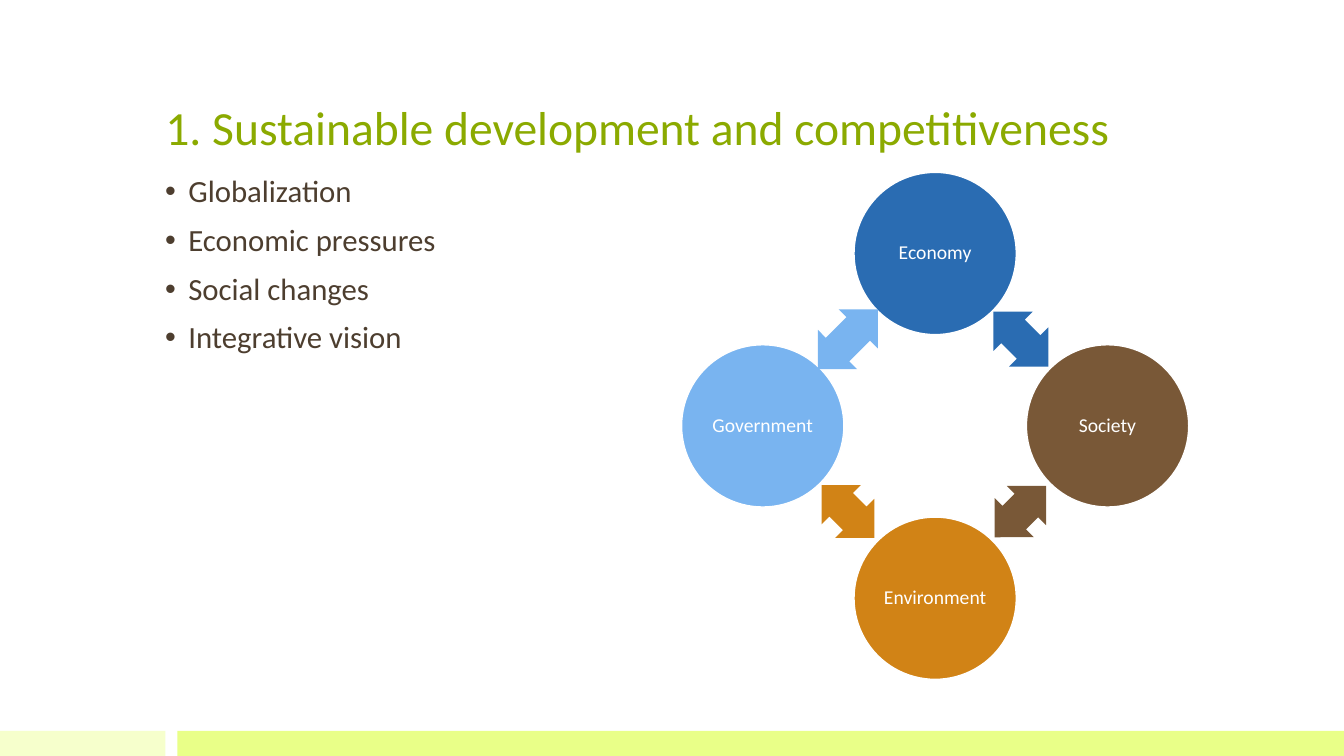
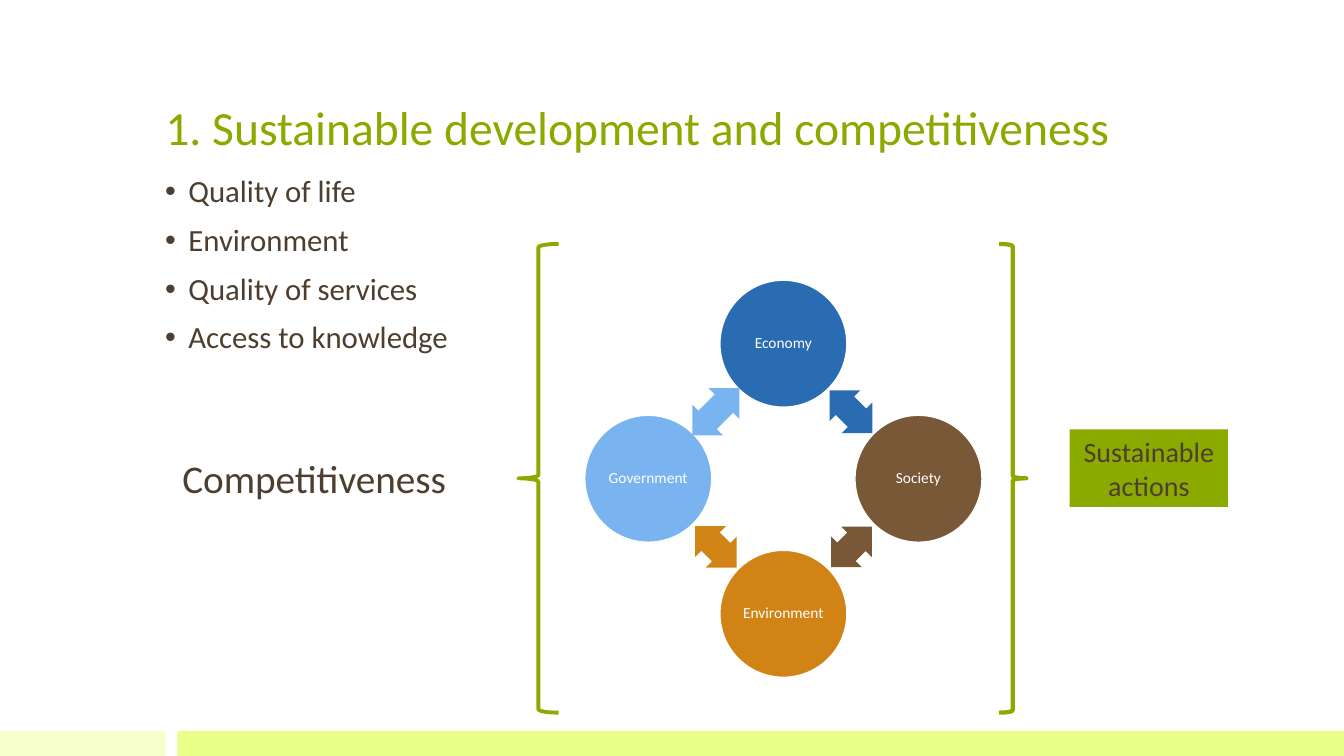
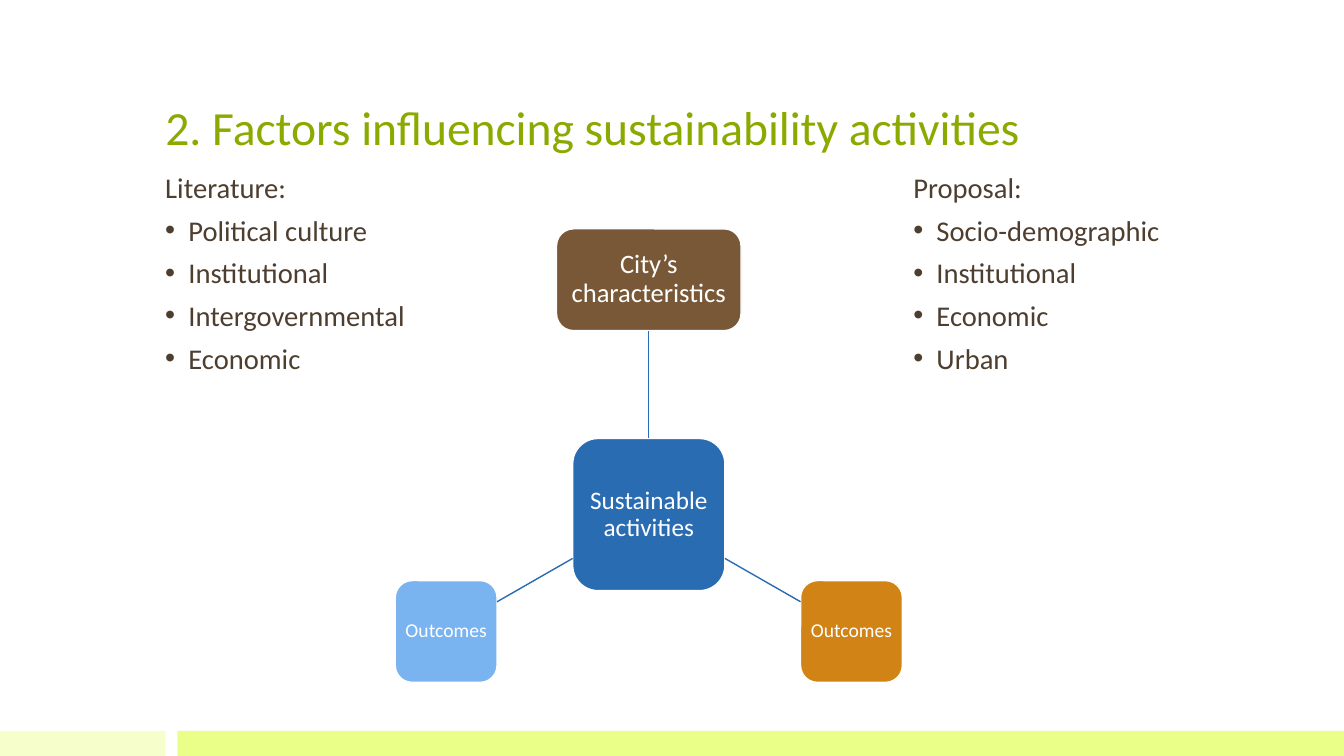
from dataclasses import dataclass

from lxml.etree import SubElement
from pptx import Presentation
from pptx.dml.color import RGBColor
from pptx.enum.shapes import MSO_CONNECTOR, MSO_SHAPE as Shape
from pptx.enum.text import MSO_ANCHOR as Anchor, MSO_AUTO_SIZE, PP_ALIGN as Align
from pptx.oxml.ns import qn
from pptx.util import Emu, Pt

# Shared look
PX = 9144  # EMU per px, 100 px to the inch
WIDTH, HEIGHT = 1333, 750
FONT = "Calibri"
WHITE = RGBColor(0xFF, 0xFF, 0xFF)
PALE_LIME = RGBColor(0xF6, 0xFF, 0xCC)
LIME = RGBColor(0xE9, 0xFF, 0x88)
GREEN = RGBColor(0x8B, 0xAA, 0x00)
DARK = RGBColor(0x4D, 0x3E, 0x2F)
BLUE = RGBColor(0x2A, 0x6C, 0xB2)
BROWN = RGBColor(0x79, 0x58, 0x37)
ORANGE = RGBColor(0xD1, 0x83, 0x16)
SKY = RGBColor(0x79, 0xB4, 0xF0)


@dataclass(frozen=True)
class Box:
    left: int
    top: int
    width: int
    height: int

    def emu(self) -> tuple[Emu, ...]:
        return tuple(px(n) for n in (self.left, self.top, self.width, self.height))


@dataclass(frozen=True)
class Sector:
    """A circle of the cycle and the arrow to the next one."""
    label: str
    color: RGBColor
    across: int  # direction from the cycle's centre
    down: int
    arrow_ratio: float  # arrow length / circle diameter


@dataclass(frozen=True)
class Factor:
    label: str
    color: RGBColor
    box: Box
    size: int


TITLE_BOX = Box(154, 30, 1025, 129)
BANDS = ((Box(0, 725, 164, 25), PALE_LIME), (Box(176, 725, 1157, 25), LIME))
SECTORS = (
    Sector("Economy", BLUE, 0, -1, 0.48),
    Sector("Society", BROWN, 1, 0, 0.45),
    Sector("Environment", ORANGE, 0, 1, 0.46),
    Sector("Government", SKY, -1, 0, 0.52),
)


def px(n: int) -> Emu:
    return Emu(n * PX)


def write_text(shape, lines, *, size, color=DARK, align=Align.LEFT, anchor=Anchor.TOP,
               spacing=None, before=None, bullets_from=None, inset=None, wrap=True):
    """Fill a shape with paragraphs, bulleted from the given line on."""
    frame = shape.text_frame
    frame.text = "\n".join(lines)
    frame.auto_size = MSO_AUTO_SIZE.NONE
    frame.word_wrap = wrap
    frame.vertical_anchor = anchor
    if inset is not None:
        frame.margin_left = frame.margin_right = px(inset)
        frame.margin_top = frame.margin_bottom = px(inset)
    for index, paragraph in enumerate(frame.paragraphs):
        paragraph.alignment = align
        if spacing is not None:
            paragraph.line_spacing = spacing
        if before is not None:
            paragraph.space_before = Pt(before)
        font = paragraph.runs[0].font
        font.name, font.size = FONT, Pt(size)
        font.color.rgb = color
        if bullets_from is not None and index >= bullets_from:
            properties = paragraph._p.get_or_add_pPr()
            properties.set("marL", str(px(23)))
            properties.set("indent", str(px(-23)))
            SubElement(properties, qn("a:buFont"), typeface="Arial")
            SubElement(properties, qn("a:buChar"), char="•")


def add_figure(slide, preset, box: Box, *, fill=None, line=None, weight=1.0):
    figure = slide.shapes.add_shape(preset, *box.emu())
    figure.shadow.inherit = False
    if fill is None:
        figure.fill.background()
    else:
        figure.fill.solid()
        figure.fill.fore_color.rgb = fill
    if line is None:
        figure.line.fill.background()
    else:
        figure.line.color.rgb = line
        figure.line.width = Pt(weight)
    return figure


def add_text(slide, box: Box, lines, **style):
    write_text(slide.shapes.add_textbox(*box.emu()), lines, **style)


def add_link(slide, start: tuple[int, int], end: tuple[int, int]):
    link = slide.shapes.add_connector(
        MSO_CONNECTOR.STRAIGHT, *(px(n) for n in (*start, *end)))
    link.line.color.rgb = BLUE
    link.line.width = Pt(1)
    SubElement(link._element.spPr, qn("a:effectLst"))
    return link


def new_slide(deck, title: str):
    """Start a title-only slide with the footer bands."""
    slide = deck.slides.add_slide(deck.slide_layouts[5])
    for box, color in BANDS:
        add_figure(slide, Shape.RECTANGLE, box, fill=color)
    heading = slide.shapes.title
    heading.left, heading.top, heading.width, heading.height = TITLE_BOX.emu()
    write_text(heading, [title], size=34, color=GREEN, anchor=Anchor.BOTTOM)
    return slide


def add_cycle(slide, center_x: int, center_y: int, diameter: int, step: int, size: int):
    """Four circles around a centre, with a two-way arrow between neighbours."""
    arrow_height = round(diameter * 0.34)
    for index, sector in enumerate(SECTORS):
        x = center_x + sector.across * step
        y = center_y + sector.down * step
        circle = add_figure(
            slide, Shape.OVAL,
            Box(x - diameter // 2, y - diameter // 2, diameter, diameter),
            fill=sector.color, line=WHITE)
        write_text(circle, [sector.label], size=size, color=WHITE, align=Align.CENTER,
                   anchor=Anchor.MIDDLE, spacing=0.9, inset=2, wrap=False)

        following = SECTORS[(index + 1) % len(SECTORS)]
        middle_x = center_x + (sector.across + following.across) * step // 2
        middle_y = center_y + (sector.down + following.down) * step // 2
        length = round(diameter * sector.arrow_ratio)
        arrow = add_figure(
            slide, Shape.LEFT_RIGHT_ARROW,
            Box(middle_x - length // 2, middle_y - arrow_height // 2, length, arrow_height),
            fill=sector.color)
        arrow.adjustments[0], arrow.adjustments[1] = 0.6, 0.5
        arrow.rotation = 45 + 90 * index


def add_factor(slide, factor: Factor):
    block = add_figure(slide, Shape.ROUNDED_RECTANGLE, factor.box,
                       fill=factor.color, line=WHITE)
    write_text(block, [factor.label], size=factor.size, color=WHITE, align=Align.CENTER,
               anchor=Anchor.MIDDLE, spacing=0.9, inset=2)
    return block


def build_development(deck):
    slide = new_slide(deck, "1. Sustainable development and competitiveness")
    add_text(slide, Box(154, 170, 399, 200),
             ["Globalization", "Economic pressures", "Social changes", "Integrative vision"],
             size=22, spacing=0.9, before=11, bullets_from=0)
    add_cycle(slide, 927, 422, diameter=161, step=171, size=14)


def build_competitiveness(deck):
    slide = new_slide(deck, "1. Sustainable development and competitiveness")
    add_text(slide, Box(154, 170, 399, 216),
             ["Quality of life", "Environment", "Quality of services", "Access to knowledge"],
             size=22, spacing=0.9, before=11, bullets_from=0)
    add_cycle(slide, 777, 475, diameter=126, step=134, size=11)

    # Input, braces and result
    add_text(slide, Box(171, 446, 290, 57), ["Competitiveness"], size=28)
    add_figure(slide, Shape.LEFT_BRACE, Box(514, 242, 40, 465), line=GREEN, weight=2.75)
    add_figure(slide, Shape.RIGHT_BRACE, Box(991, 242, 27, 465), line=GREEN, weight=3)
    actions = add_figure(slide, Shape.RECTANGLE, Box(1061, 426, 157, 77), fill=GREEN)
    write_text(actions, ["Sustainable actions"], size=20, align=Align.CENTER,
               anchor=Anchor.MIDDLE)


def build_factors(deck):
    slide = new_slide(deck, "2. Factors influencing sustainability activities")

    # Activities with their cause above and outcomes below
    activities = add_factor(slide, Factor(
        "Sustainable activities", BLUE, Box(568, 435, 151, 151), 18))
    city = add_factor(slide, Factor(
        "City’s characteristics", BROWN, Box(552, 227, 183, 101), 19))
    cause = add_link(slide, (643, 435), (643, 328))
    cause.begin_connect(activities, 0)
    cause.end_connect(city, 2)
    for color, left, start_x, end_x in ((ORANGE, 794, 719, 794), (SKY, 392, 568, 493)):
        add_factor(slide, Factor("Outcomes", color, Box(left, 576, 101, 101), 14))
        add_link(slide, (start_x, 554), (end_x, 597))

    # Factor lists
    for left, lines in (
        (154, ["Literature:", "Political culture", "Institutional",
               "Intergovernmental", "Economic"]),
        (896, ["Proposal:", "Socio-demographic", "Institutional", "Economic", "Urban"]),
    ):
        add_text(slide, Box(left, 170, 321, 216), lines,
                 size=20.4, spacing=0.8, before=11, bullets_from=1)


def main():
    deck = Presentation()
    deck.slide_width, deck.slide_height = px(WIDTH), px(HEIGHT)
    build_development(deck)
    build_competitiveness(deck)
    build_factors(deck)
    deck.save("out.pptx")


if __name__ == "__main__":
    main()
